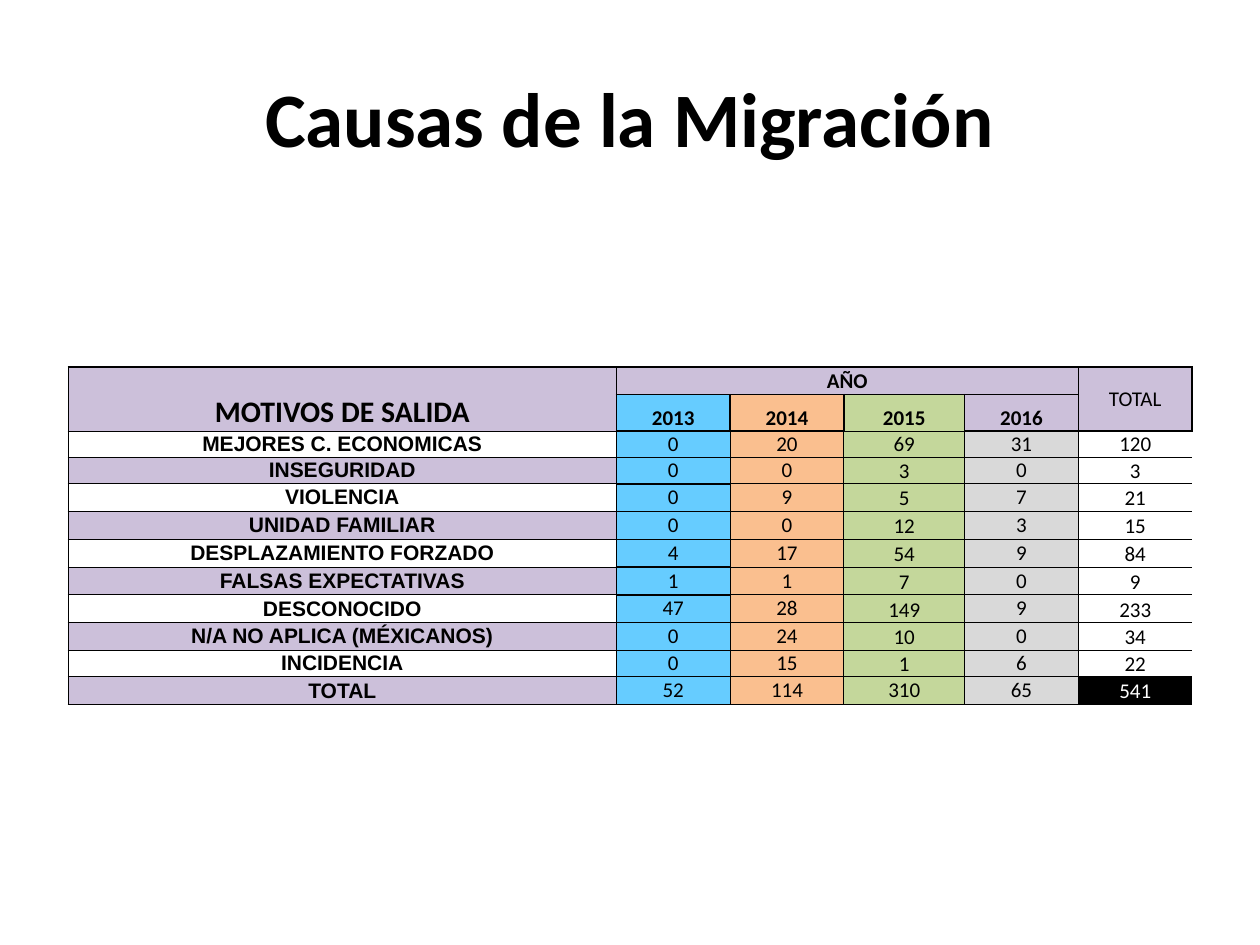
"""Build the slide on the causes of migration, with its table by year."""
import pptx
import pptx.dml.color
import pptx.enum.text
import pptx.oxml.ns
import pptx.util
from lxml import etree

Pt = pptx.util.Pt
RGB = pptx.dml.color.RGBColor
ALIGN = pptx.enum.text.PP_ALIGN
ANCHOR = pptx.enum.text.MSO_ANCHOR

BLACK = RGB(0, 0, 0)
WHITE = RGB(255, 255, 255)
LILAC = RGB(0xCC, 0xC0, 0xDA)
BLUE = RGB(0x66, 0xCC, 0xFF)
PEACH = RGB(0xFA, 0xBF, 0x8F)
GREEN = RGB(0xC4, 0xD7, 0x9B)
GREY = RGB(0xD9, 0xD9, 0xD9)

PLAIN = "{2D5ABB26-0587-4C30-8999-92F81FD0307C}"
WIDTHS = [313.2, 65, 65, 69, 65, 65]
SHORT, TALL = 15.1, 15.9
THIN, THICK = 0.5, 1
HEADS = [
    ["MOTIVOS DE SALIDA", "AÑO", "", "", "", "TOTAL"],
    ["", "2013", "2014", "2015", "2016", ""],
]
DATA = [
    ["MEJORES C. ECONOMICAS", 0, 20, 69, 31, 120],
    ["INSEGURIDAD", 0, 0, 3, 0, 3],
    ["VIOLENCIA", 0, 9, 5, 7, 21],
    ["UNIDAD FAMILIAR", 0, 0, 12, 3, 15],
    ["DESPLAZAMIENTO FORZADO", 4, 17, 54, 9, 84],
    ["FALSAS EXPECTATIVAS", 1, 1, 7, 0, 9],
    ["DESCONOCIDO", 47, 28, 149, 9, 233],
    ["N/A NO APLICA (MÉXICANOS)", 0, 24, 10, 0, 34],
    ["INCIDENCIA", 0, 15, 1, 6, 22],
    ["TOTAL", 52, 114, 310, 65, 541],
]
ROWS = HEADS + DATA
LAST = len(ROWS) - 1
SLIM = (2, 3, LAST - 1)


def assign(obj, form):
    for name, value in form.items():
        setattr(obj, name, value)


def style(part, size, bold=False, name="Calibri", ink=BLACK):
    part.alignment = ALIGN.CENTER
    assign(part.font, {"size": Pt(size), "bold": bold, "name": name})
    part.font.color.rgb = ink


def rule(cell, side, width):
    props = cell._tc.get_or_add_tcPr()
    tag = pptx.oxml.ns.qn
    line = etree.SubElement(props, tag("a:ln" + side), w=str(Pt(width)))
    if not width:
        etree.SubElement(line, tag("a:noFill"))
        return
    fill = etree.SubElement(line, tag("a:solidFill"))
    etree.SubElement(fill, tag("a:srgbClr"), val=str(BLACK))


def edges(row, col):
    if row < 2:
        low = (row, col) in ((0, 0), (1, 0), (1, 3))
        return {"L": THICK, "R": THICK, "T": THICK, "B": THIN if low else THICK}
    lines = dict.fromkeys("LRTB", THIN)
    if row == 2 and col not in (0, 3):
        lines["T"] = THICK
    if row == LAST and col != 4:
        lines["B"] = THICK
    if col == 0:
        lines.update(L=THICK, R=THICK)
    elif col == 1:
        lines["L"] = THICK
        if row < LAST:
            lines["T"] = THICK
        if row < LAST - 1:
            lines["B"] = THICK
    elif col == 5:
        lines["R"] = 0
    return lines


def shade(row, col):
    if row == 0 or (row == 1 and col in (0, 4, 5)):
        return LILAC
    if col == 0:
        return LILAC if row % 2 else WHITE
    if col == 5:
        return BLACK if row == LAST else None
    return (BLUE, PEACH, GREEN, GREY)[col - 1]


def anchor(row, col):
    if row < 2:
        return ANCHOR.MIDDLE if col == 5 else ANCHOR.BOTTOM
    low = col == 5 or (col == 3 and row < LAST)
    return ANCHOR.BOTTOM if low else ANCHOR.MIDDLE


def format_cell(cell, row, col):
    sides = ("left", "right", "top", "bottom")
    form = {"margin_" + side: Pt(0) for side in sides}
    assign(cell, {**form, "vertical_anchor": anchor(row, col)})
    for side, width in edges(row, col).items():
        rule(cell, side, width)
    tone = shade(row, col)
    if tone is None:
        cell.fill.background()
    else:
        cell.fill.solid()
        cell.fill.fore_color.rgb = tone
    if cell.is_spanned:
        return
    cell.text = str(ROWS[row][col])
    style(
        cell.text_frame.paragraphs[0],
        size=17 if row == col == 0 else 12,
        bold=col == 0 or (row < 2 and col < 5),
        name="Arial" if row > 1 and col == 0 else "Calibri",
        ink=WHITE if tone == BLACK else BLACK,
    )


def add_title(slide, text):
    title = slide.shapes.title
    box = {"left": 36, "top": 21.6, "width": 648, "height": 90}
    assign(title, {name: Pt(value) for name, value in box.items()})
    frame = title.text_frame
    frame.text = text
    frame.vertical_anchor = ANCHOR.MIDDLE
    style(frame.paragraphs[0], 44, bold=True)


def add_grid(slide):
    tall = [SHORT if row in SLIM else TALL for row in range(len(ROWS))]
    frame = slide.shapes.add_table(
        len(ROWS), len(WIDTHS), Pt(39), Pt(209.6), Pt(sum(WIDTHS)), Pt(sum(tall))
    )
    grid = frame.table
    assign(grid, {"first_row": False, "horz_banding": False})
    grid._tbl.tblPr.find(pptx.oxml.ns.qn("a:tableStyleId")).text = PLAIN
    for part, width in zip(grid.columns, WIDTHS):
        part.width = Pt(width)
    for part, height in zip(grid.rows, tall):
        part.height = Pt(height)
    for start, end in (((0, 0), (1, 0)), ((0, 1), (0, 4)), ((0, 5), (1, 5))):
        grid.cell(*start).merge(grid.cell(*end))
    for row in range(len(ROWS)):
        for col in range(len(WIDTHS)):
            format_cell(grid.cell(row, col), row, col)


def main():
    deck = pptx.Presentation()
    assign(deck, {"slide_width": Pt(720), "slide_height": Pt(540)})
    slide = deck.slides.add_slide(deck.slide_layouts[5])
    add_title(slide, "Causas de la Migración")
    add_grid(slide)
    deck.save("out.pptx")


if __name__ == "__main__":
    main()
